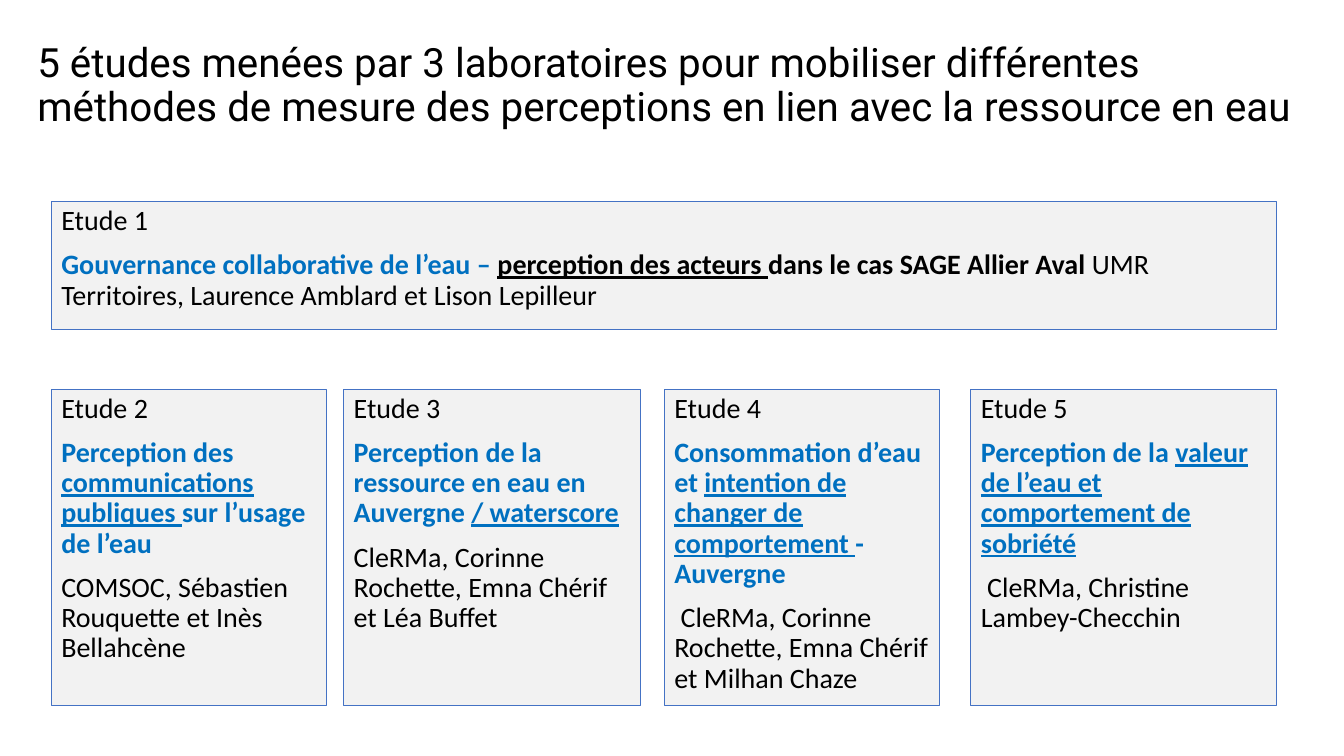
from pptx import Presentation
from pptx.dml.color import RGBColor
from pptx.enum.shapes import MSO_SHAPE
from pptx.enum.text import MSO_ANCHOR, MSO_AUTO_SIZE, PP_ALIGN
from pptx.util import Inches, Pt

COLORS = {"text": "000000", "accent": "0070C0", "panel": "F2F2F2", "border": "4472C4"}

PLAIN = ("text", False, False)
STRONG = ("text", True, False)
STRONG_KEY = ("text", True, True)
TOPIC = ("accent", True, False)
TOPIC_KEY = ("accent", True, True)


class StudySlide:
    def __init__(self, presentation):
        self.slide = presentation.slides.add_slide(presentation.slide_layouts[5])

    def color(self, name):
        return RGBColor.from_string(COLORS[name])

    def place(self, shape, left, top, width, height):
        shape.left, shape.top = Inches(left), Inches(top)
        shape.width, shape.height = Inches(width), Inches(height)

    def add_run(self, paragraph, text, style, size, font):
        color, bold, underline = style
        run = paragraph.add_run()
        run.text = text
        run.font.name = font
        run.font.size = Pt(size)
        run.font.bold = bold
        run.font.underline = underline
        run.font.color.rgb = self.color(color)

    def format_paragraph(self, paragraph, before):
        paragraph.alignment = PP_ALIGN.LEFT
        paragraph.line_spacing = 0.9
        paragraph.space_before = Pt(before)

    def add_title(self, text):
        title = self.slide.shapes.title
        self.place(title, 0.27, 0.18, 12.81, 1.36)
        frame = title.text_frame
        frame.word_wrap = True
        frame.auto_size = MSO_AUTO_SIZE.NONE
        frame.vertical_anchor = MSO_ANCHOR.MIDDLE
        self.format_paragraph(frame.paragraphs[0], 0)
        self.add_run(frame.paragraphs[0], text, PLAIN, 28.8, "Roboto")

    def add_study(self, number, left, top, width, height, paragraphs):
        panel = self.slide.shapes.add_shape(
            MSO_SHAPE.RECTANGLE, Inches(left), Inches(top), Inches(width), Inches(height))
        panel.shadow.inherit = False
        panel.fill.solid()
        panel.fill.fore_color.rgb = self.color("panel")
        panel.line.color.rgb = self.color("border")
        panel.line.width = Pt(0.75)
        frame = panel.text_frame
        frame.word_wrap = True
        frame.vertical_anchor = MSO_ANCHOR.TOP
        heading = [(f"Etude {number}", PLAIN)]
        for index, runs in enumerate([heading, *paragraphs]):
            paragraph = frame.add_paragraph() if index else frame.paragraphs[0]
            self.format_paragraph(paragraph, 10)
            for text, style in runs:
                self.add_run(paragraph, text, style, 20, "Calibri")


GOVERNANCE = [
    [("Gouvernance collaborative de l’eau – ", TOPIC),
     ("perception des acteurs ", STRONG_KEY),
     ("dans le cas SAGE Allier Aval ", STRONG),
     ("UMR Territoires, Laurence Amblard et Lison Lepilleur", PLAIN)],
]

PERCEPTION_STUDIES = [
    (0.51, 2.73, [
        [("Perception des ", TOPIC),
         ("communications publiques ", TOPIC_KEY),
         ("sur l’usage de l’eau", TOPIC)],
        [("COMSOC, Sébastien Rouquette et Inès Bellahcène", PLAIN)],
    ]),
    (3.41, 2.94, [
        [("Perception de la ressource en eau en Auvergne ", TOPIC),
         ("/ waterscore", TOPIC_KEY)],
        [("CleRMa, Corinne Rochette, Emna Chérif et Léa Buffet", PLAIN)],
    ]),
    (6.59, 2.73, [
        [("Consommation d’eau et ", TOPIC),
         ("intention de changer de comportement ", TOPIC_KEY),
         ("- Auvergne", TOPIC)],
        [(" CleRMa, Corinne Rochette, Emna Chérif et Milhan Chaze", PLAIN)],
    ]),
    (9.63, 3.03, [
        [("Perception de la ", TOPIC),
         ("valeur de l’eau et comportement de sobriété", TOPIC_KEY)],
        [(" CleRMa, Christine Lambey-Checchin", PLAIN)],
    ]),
]


def main():
    presentation = Presentation()
    presentation.slide_width = Inches(13.33)
    presentation.slide_height = Inches(7.5)
    studies = StudySlide(presentation)
    studies.add_title(
        "5 études menées par 3 laboratoires pour mobiliser différentes méthodes "
        "de mesure des perceptions en lien avec la ressource en eau")
    studies.add_study(1, 0.51, 2, 12.15, 1.27, GOVERNANCE)
    for number, (left, width, paragraphs) in enumerate(PERCEPTION_STUDIES, start=2):
        studies.add_study(number, left, 3.86, width, 3.14, paragraphs)
    presentation.save("out.pptx")


if __name__ == "__main__":
    main()
